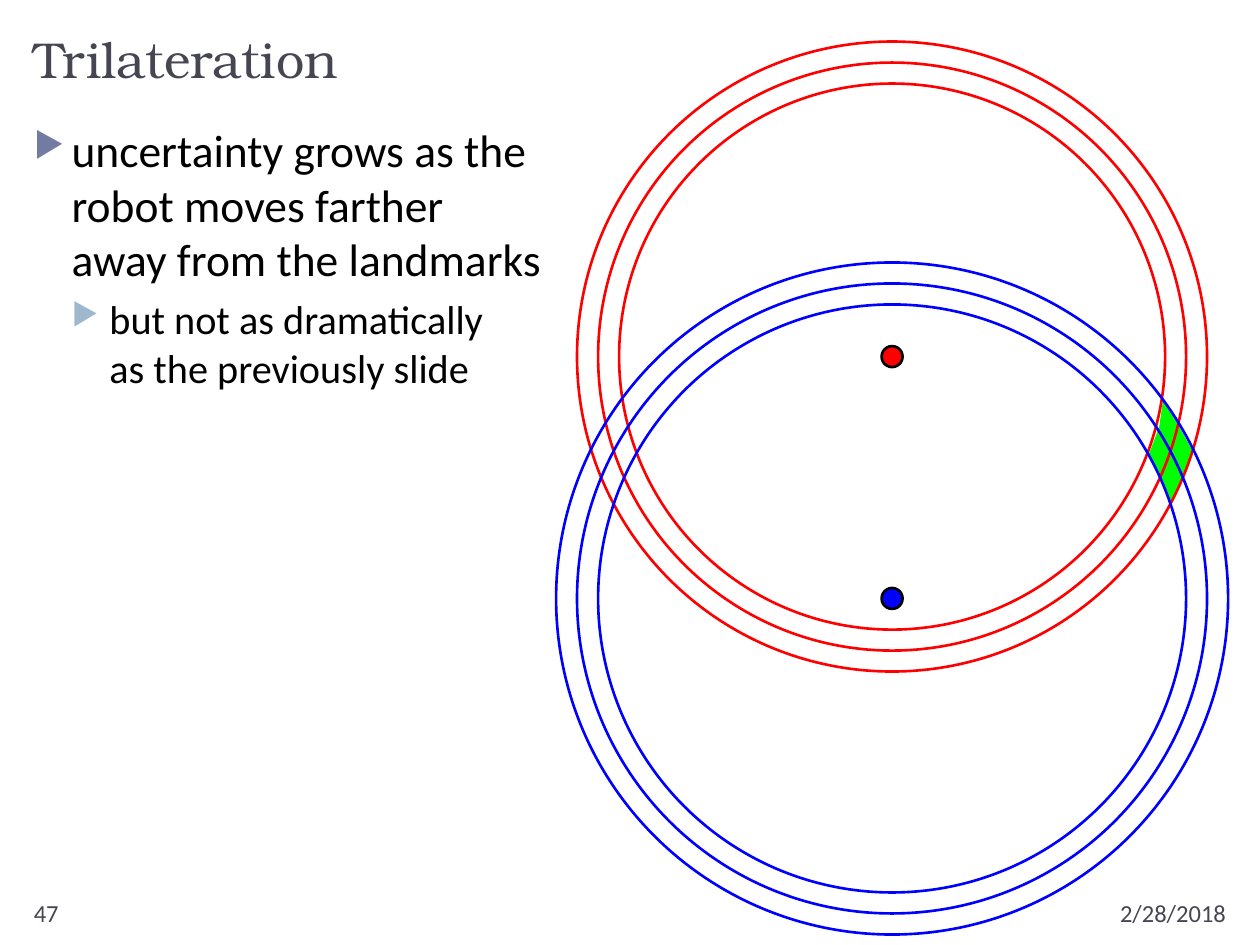
import pptx
import pptx.util
import pptx.dml.color
import pptx.enum.shapes
import pptx.enum.text
import pptx.oxml.ns
from lxml import etree
from pptx.util import Inches

COLORS = {
    "heading": "464653", "body": "000000", "outline": "000000",
    "red": "FF0000", "blue": "0000FF", "overlap": "00FF00",
    "bullet": "727CA3", "sub_bullet": "9FB8CD",
}
ALIGN = pptx.enum.text.PP_ALIGN
ANCHOR = pptx.enum.text.MSO_ANCHOR

# Content: text, box (left, top, width, height), alignment, anchor, font
LABELS = [
    ("Trilateration", (0.17, 0.17, 9.67, 0.58), ALIGN.LEFT, ANCHOR.BOTTOM,
     {"name": "TeX Gyre Bonum", "size": 28.8}),
    ("2/28/2018", (8, 7.08, 1.83, 0.27), ALIGN.RIGHT, ANCHOR.TOP,
     {"name": "Calibri", "size": 14}),
    ("47", (0.17, 7.08, 2.17, 0.27), ALIGN.LEFT, ANCHOR.TOP,
     {"name": "Calibri", "size": 14}),
]
BODY_BOX = (0.17, 0.92, 9.67, 6)
# text, level, size, space before, bullet colour
POINTS = [
    ("uncertainty grows as the\nrobot moves farther\naway from the landmarks",
     0, 26, 6, "bullet"),
    ("but not as dramatically\nas the previously slide",
     1, 23, 5, "sub_bullet"),
]
INDENT = 0.3

# Landmarks share one vertical axis; each has three range rings
AXIS_X = 7.08
RING_GAP = 1 / 6
DOT_RADIUS = 1 / 12
LANDMARKS = [("red", 2.83, 7 / 3), ("blue", 4.75, 2.5)]  # colour, y, mid radius
OVERLAP = [(9.23, 3.18), (9.2, 3.39), (9.12, 3.6), (9.21, 3.79),
           (9.29, 3.99), (9.39, 3.8), (9.46, 3.57), (9.35, 3.37)]


def rgb(name):
    return pptx.dml.color.RGBColor.from_string(COLORS[name])


def add_text_frame(slide, box, anchor):
    frame = slide.shapes.add_textbox(*map(Inches, box)).text_frame
    frame.word_wrap = True
    frame.vertical_anchor = anchor
    return frame


def write(paragraph, text, color, name, size):
    paragraph.text = text
    for run in paragraph.runs:
        for key, value in {"name": name, "size": pptx.util.Pt(size)}.items():
            setattr(run.font, key, value)
        run.font.color.rgb = rgb(color)


def add_bullet(paragraph, level, color):
    props = paragraph._p.get_or_add_pPr()
    props.set("marL", str(Inches(INDENT * (level + 1))))
    props.set("indent", str(Inches(-INDENT)))
    qn = pptx.oxml.ns.qn
    bullet_color = etree.SubElement(props, qn("a:buClr"))
    etree.SubElement(bullet_color, qn("a:srgbClr"), val=COLORS[color])
    etree.SubElement(props, qn("a:buSzPct"), val="76000")
    etree.SubElement(props, qn("a:buChar"), char="▶")


def add_circle(slide, y, radius, line, fill=None):
    circle = slide.shapes.add_shape(
        pptx.enum.shapes.MSO_SHAPE.OVAL, Inches(AXIS_X - radius),
        Inches(y - radius), Inches(2 * radius), Inches(2 * radius))
    circle.shadow.inherit = False
    circle.line.color.rgb = rgb(line)
    circle.line.width = pptx.util.Pt(1.5)
    if fill:
        circle.fill.solid()
        circle.fill.fore_color.rgb = rgb(fill)
    else:
        circle.fill.background()


def main():
    deck = pptx.Presentation()
    deck.slide_width, deck.slide_height = Inches(10), Inches(7.5)
    slide = deck.slides.add_slide(deck.slide_layouts[6])

    # Region where the two range bands overlap
    corners = [(Inches(x), Inches(y)) for x, y in OVERLAP]
    builder = slide.shapes.build_freeform(*corners[0])
    builder.add_line_segments(corners[1:], close=True)
    overlap = builder.convert_to_shape()
    overlap.shadow.inherit = False
    overlap.fill.solid()
    overlap.fill.fore_color.rgb = rgb("overlap")
    overlap.line.fill.background()

    # Title, date and page number
    for text, box, align, anchor, font in LABELS:
        paragraph = add_text_frame(slide, box, anchor).paragraphs[0]
        paragraph.alignment = align
        write(paragraph, text, "heading", **font)

    # Bulleted points
    body = add_text_frame(slide, BODY_BOX, ANCHOR.TOP)
    for i, (text, level, size, space, bullet) in enumerate(POINTS):
        paragraph = body.add_paragraph() if i else body.paragraphs[0]
        paragraph.level = level
        paragraph.space_before = pptx.util.Pt(space)
        add_bullet(paragraph, level, bullet)
        write(paragraph, text, "body", "Calibri", size)

    # Landmarks and their range rings
    for color, y, mid_radius in LANDMARKS:
        add_circle(slide, y, DOT_RADIUS, "outline", color)
        for step in (-1, 0, 1):
            add_circle(slide, y, mid_radius + step * RING_GAP, color)

    deck.save("out.pptx")


if __name__ == "__main__":
    main()
